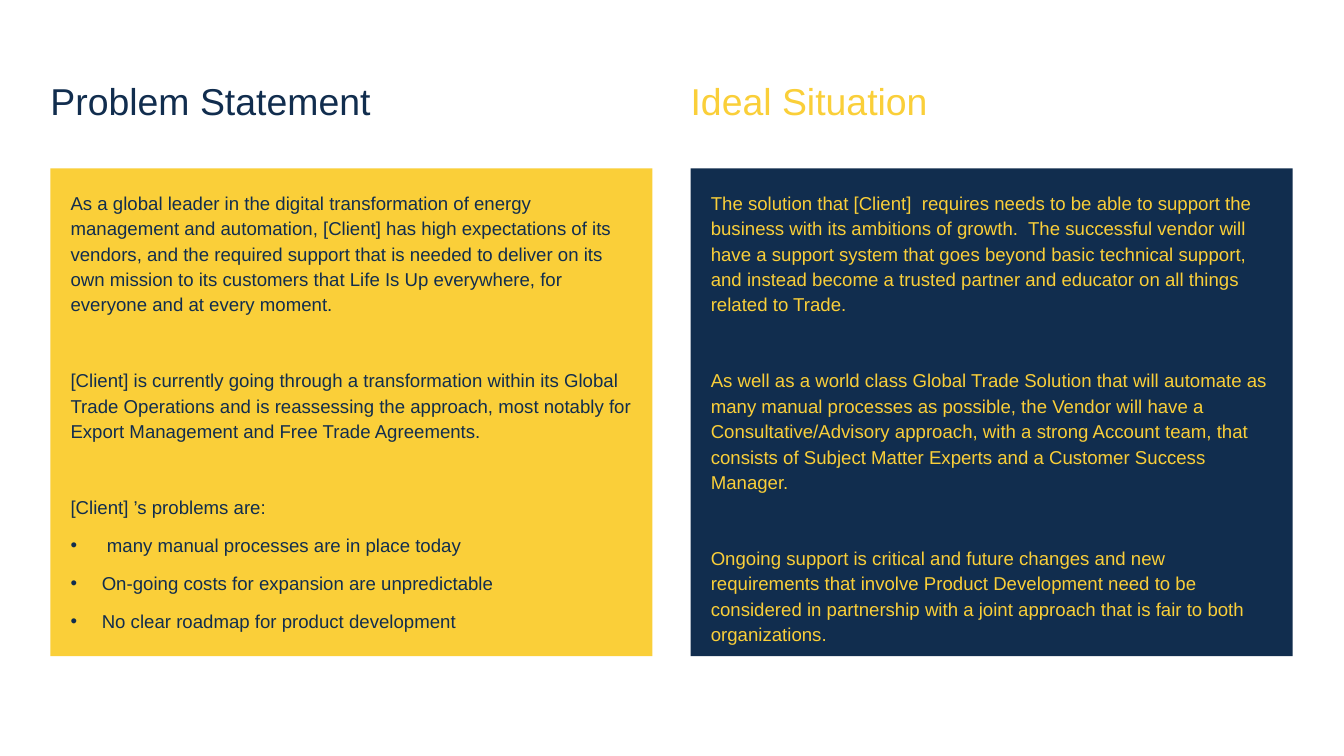
from dataclasses import dataclass

from lxml.etree import SubElement
from pptx import Presentation
from pptx.dml.color import RGBColor
from pptx.enum.shapes import MSO_SHAPE
from pptx.enum.text import MSO_ANCHOR, PP_ALIGN
from pptx.oxml.ns import qn
from pptx.util import Inches, Pt


@dataclass(frozen=True)
class Theme:
    navy: RGBColor = RGBColor(0x11, 0x2D, 0x4E)
    yellow: RGBColor = RGBColor(0xFA, 0xCF, 0x39)
    font: str = "Arial"
    heading_size: float = 26.7
    body_size: float = 13.3
    heading_leading: float = 0.9
    body_leading: float = 1.14
    item_gap: float = 9
    section_gap: float = 36


class StatementSlide:
    width = 5.97

    def __init__(self, slide, theme):
        self.slide = slide
        self.theme = theme

    def style(self, paragraph, size, color, leading):
        paragraph.alignment = PP_ALIGN.LEFT
        paragraph.line_spacing = leading
        paragraph.font.name = self.theme.font
        paragraph.font.size = Pt(size)
        paragraph.font.color.rgb = color

    def frame(self, holder, inset, anchor):
        frame = holder.text_frame
        frame.word_wrap = True
        frame.vertical_anchor = anchor
        frame.margin_left = frame.margin_right = Inches(inset)
        frame.margin_top = frame.margin_bottom = Inches(inset)
        return frame

    def heading(self, left, wording, color):
        heading = self.slide.shapes.add_textbox(
            Inches(left), Inches(0.39), Inches(self.width), Inches(1.28))
        paragraph = self.frame(heading, 0, MSO_ANCHOR.MIDDLE).paragraphs[0]
        paragraph.text = wording
        self.style(paragraph, self.theme.heading_size, color, self.theme.heading_leading)

    def bullet(self, paragraph):
        properties = paragraph._p.get_or_add_pPr()
        properties.set("marL", str(Inches(0.31)))
        properties.set("indent", str(-Inches(0.31)))
        SubElement(properties, qn("a:buFont"), typeface=self.theme.font)
        SubElement(properties, qn("a:buChar"), char="•")

    def panel(self, left, sections, problems, fill, color):
        panel = self.slide.shapes.add_shape(
            MSO_SHAPE.RECTANGLE, Inches(left), Inches(1.67), Inches(self.width), Inches(4.84))
        panel.shadow.inherit = False
        panel.fill.solid()
        panel.fill.fore_color.rgb = fill
        panel.line.fill.background()
        frame = self.frame(panel, 0.2, MSO_ANCHOR.TOP)
        for index, wording in enumerate(sections + problems):
            paragraph = frame.add_paragraph() if index else frame.paragraphs[0]
            paragraph.text = wording
            is_problem = index >= len(sections)
            if is_problem:
                self.bullet(paragraph)
            self.style(paragraph, self.theme.body_size, color, self.theme.body_leading)
            if index:
                gap = self.theme.item_gap if is_problem else self.theme.section_gap
                paragraph.space_before = Pt(gap)


PROBLEM_SECTIONS = [
    "As a global leader in the digital transformation of energy management and automation, "
    "[Client] has high expectations of its vendors, and the required support that is needed "
    "to deliver on its own mission to its customers that Life Is Up everywhere, for everyone "
    "and at every moment.",
    "[Client] is currently going through a transformation within its Global Trade Operations "
    "and is reassessing the approach, most notably for Export Management and Free Trade "
    "Agreements.",
    "[Client] ’s problems are:",
]
PROBLEMS = [
    " many manual processes are in place today",
    "On-going costs for expansion are unpredictable",
    "No clear roadmap for product development",
]
IDEAL_SECTIONS = [
    "The solution that [Client]  requires needs to be able to support the business with its "
    "ambitions of growth.  The successful vendor will have a support system that goes beyond "
    "basic technical support, and instead become a trusted partner and educator on all things "
    "related to Trade.",
    "As well as a world class Global Trade Solution that will automate as many manual "
    "processes as possible, the Vendor will have a Consultative/Advisory approach, with a "
    "strong Account team, that consists of Subject Matter Experts and a Customer Success "
    "Manager.",
    "Ongoing support is critical and future changes and new requirements that involve Product "
    "Development need to be considered in partnership with a joint approach that is fair to "
    "both organizations.",
]


def main():
    presentation = Presentation()
    presentation.slide_width = Inches(13.33)
    presentation.slide_height = Inches(7.5)
    theme = Theme()
    statement = StatementSlide(
        presentation.slides.add_slide(presentation.slide_layouts[6]), theme)
    columns = [
        (0.5, "Problem Statement", PROBLEM_SECTIONS, PROBLEMS, theme.yellow, theme.navy),
        (6.85, "Ideal Situation", IDEAL_SECTIONS, [], theme.navy, theme.yellow),
    ]
    for left, title, sections, problems, fill, color in columns:
        statement.heading(left, title, color)
        statement.panel(left, sections, problems, fill, color)
    presentation.save("out.pptx")


if __name__ == "__main__":
    main()
